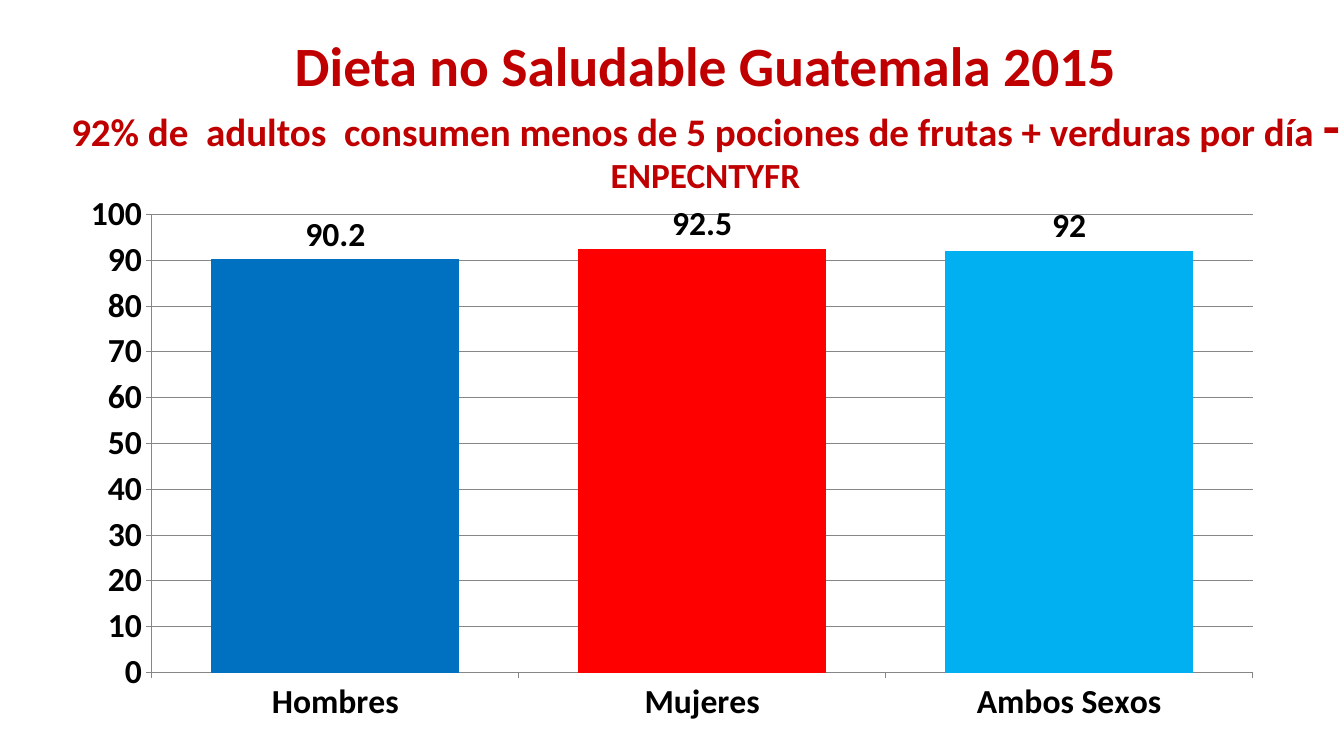
from lxml import etree
from pptx import Presentation
from pptx.chart.data import CategoryChartData
from pptx.dml.color import RGBColor
from pptx.enum.chart import XL_CHART_TYPE, XL_LABEL_POSITION, XL_TICK_MARK
from pptx.enum.text import MSO_ANCHOR, PP_ALIGN
from pptx.oxml.ns import qn
from pptx.util import Inches, Pt

COLUMNS = XL_CHART_TYPE.COLUMN_CLUSTERED
OUTSIDE_END = XL_LABEL_POSITION.OUTSIDE_END
TICK_OUTSIDE = XL_TICK_MARK.OUTSIDE
MIDDLE = MSO_ANCHOR.MIDDLE
CENTER = PP_ALIGN.CENTER

TITLE_RUNS = [
    ("Dieta no Saludable Guatemala 2015", 39.6),
    None,  # line break
    ("92% de  adultos  consumen menos de 5 pociones de frutas + verduras por día ", 27.9),
    ("- ", 39.6),
    ("ENPECNTYFR", 25.2),
]
DIET_BY_SEX = [
    ("Hombres", 90.2, "0070C0"),
    ("Mujeres", 92.5, "FF0000"),
    ("Ambos Sexos", 92, "00B0F0"),
]


def color(hex_string):
    return RGBColor.from_string(hex_string)


class DietSlide:
    font_name = "Calibri"
    title_color = "C00000"
    text_color = "000000"
    line_color = "868686"
    chart_size = 24

    def __init__(self, presentation):
        self.width = presentation.slide_width
        self.height = presentation.slide_height
        self.slide = presentation.slides.add_slide(presentation.slide_layouts[6])

    def box(self, left, top, width, height):
        """Turn shares of the slide into lengths."""
        return (int(left * self.width), int(top * self.height),
                int(width * self.width), int(height * self.height))

    def style_font(self, font, size, hex_string):
        font.name = self.font_name
        font.size = Pt(size)
        font.bold = True
        font.color.rgb = color(hex_string)

    def add_title(self, runs, *shares):
        frame = self.slide.shapes.add_textbox(*self.box(*shares)).text_frame
        frame.word_wrap = True
        frame.vertical_anchor = MIDDLE
        paragraph = frame.paragraphs[0]
        paragraph.alignment = CENTER
        paragraph.line_spacing = 0.9
        for item in runs:
            if item is None:
                paragraph.add_line_break()
                continue
            text, size = item
            run = paragraph.add_run()
            run.text = text
            self.style_font(run.font, size, self.title_color)

    def add_column_chart(self, rows, *shares):
        data = CategoryChartData()
        data.categories = [name for name, _, _ in rows]
        data.add_series("Series 1", [value for _, value, _ in rows])
        frame = self.slide.shapes.add_chart(COLUMNS, *self.box(*shares), data)
        chart = frame.chart
        chart.has_legend = False
        chart.has_title = False
        self.style_font(chart.font, self.chart_size, self.text_color)

        # Columns and their values
        plot = chart.plots[0]
        plot.gap_width = 48
        plot.overlap = 59
        plot.vary_by_categories = False
        series = plot.series[0]
        for index, (_, _, fill_color) in enumerate(rows):
            fill = series.points[index].format.fill
            fill.solid()
            fill.fore_color.rgb = color(fill_color)
        labels = series.data_labels
        labels.show_value = True
        labels.position = OUTSIDE_END
        self.style_font(labels.font, self.chart_size, self.text_color)

        # Axes and gridlines
        scale = chart.value_axis
        scale.minimum_scale = 0
        scale.maximum_scale = 100
        scale.major_unit = 10
        scale.has_major_gridlines = True
        for axis in (chart.category_axis, scale):
            axis.major_tick_mark = TICK_OUTSIDE
            self.style_font(axis.tick_labels.font, self.chart_size, self.text_color)
        for part in (chart.category_axis, scale, scale.major_gridlines):
            part.format.line.color.rgb = color(self.line_color)
            part.format.line.width = Pt(0.75)
        self.place_plot(plot, x=0.07, y=0.06, w=0.91, h=0.83)

    def place_plot(self, plot, **shares):
        """Fix the inner plot area as shares of the chart."""
        area = plot._element.getparent()
        for old in area.findall(qn("c:layout")):
            area.remove(old)
        layout = etree.Element(qn("c:layout"))
        manual = etree.SubElement(layout, qn("c:manualLayout"))
        settings = {"layoutTarget": "inner", "xMode": "edge", "yMode": "edge", **shares}
        for name, value in settings.items():
            etree.SubElement(manual, qn(f"c:{name}")).set("val", str(value))
        area.insert(0, layout)


def main():
    presentation = Presentation()
    presentation.slide_width = Inches(13.33)
    presentation.slide_height = Inches(7.5)
    diet = DietSlide(presentation)
    # Chart first, so that the title lies in front
    diet.add_column_chart(DIET_BY_SEX, 0.05, 0.24, 0.9, 0.73)
    diet.add_title(TITLE_RUNS, 0.025, 0.06, 1, 0.19)
    presentation.save("out.pptx")


if __name__ == "__main__":
    main()
